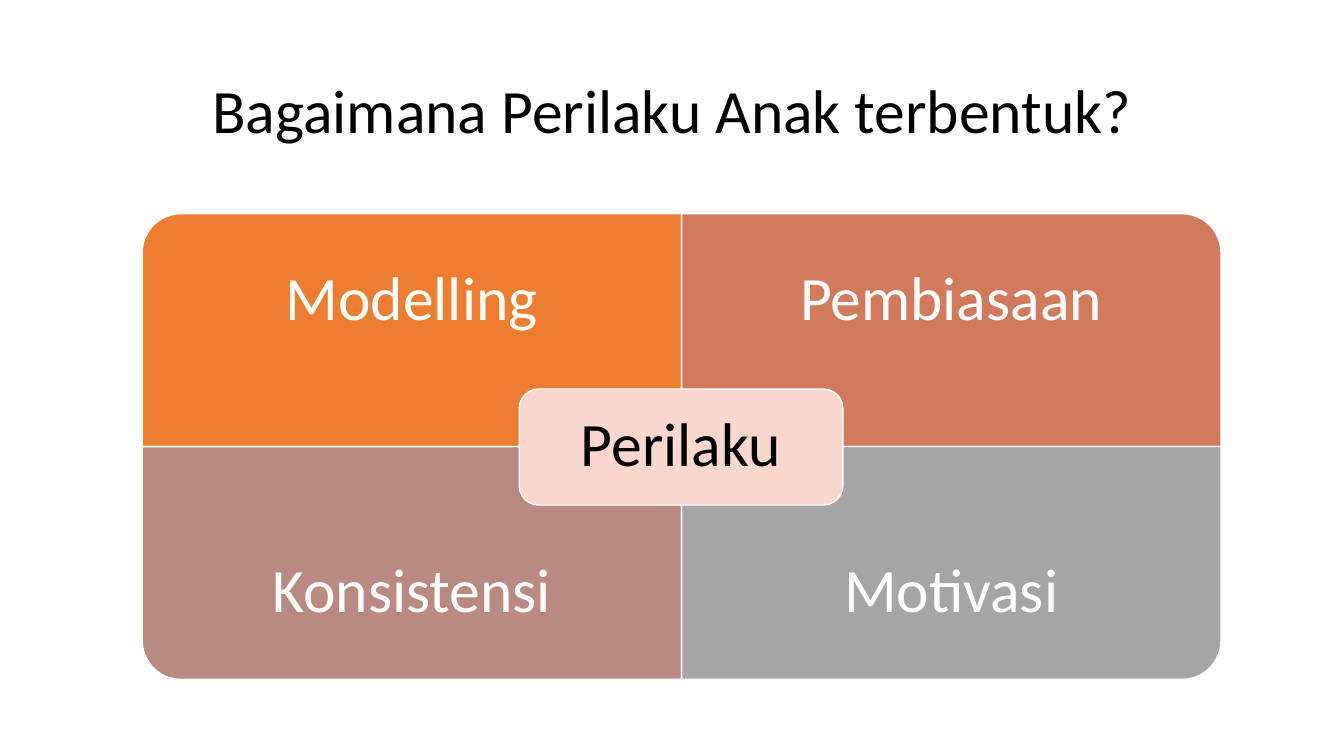
from pptx import Presentation
from pptx.dml.color import RGBColor
from pptx.enum import shapes, text
from pptx.util import Inches, Pt

WHITE = RGBColor(0xFF, 0xFF, 0xFF)
BLACK = RGBColor(0x00, 0x00, 0x00)
ORANGE = RGBColor(0xED, 0x7D, 0x31)
TERRACOTTA = RGBColor(0xD1, 0x7B, 0x5C)
ROSE = RGBColor(0xB9, 0x8A, 0x82)
GRAY = RGBColor(0xA5, 0xA5, 0xA5)
PINK = RGBColor(0xF8, 0xD7, 0xCE)

LEFT, TOP = 1.41, 2.12
WIDTH, HEIGHT = 5.35, 2.31
LABEL_HEIGHT = 1.73


def write_text(shape, wording, color, inset):
    frame = shape.text_frame
    frame.word_wrap = True
    frame.auto_size = text.MSO_AUTO_SIZE.NONE
    frame.vertical_anchor = text.MSO_ANCHOR.MIDDLE
    frame.margin_left = frame.margin_right = Inches(inset)
    frame.margin_top = frame.margin_bottom = Inches(inset)
    paragraph = frame.paragraphs[0]
    paragraph.alignment = text.PP_ALIGN.CENTER
    paragraph.line_spacing = 0.9
    run = paragraph.add_run()
    run.text = wording
    run.font.name = "Calibri"
    run.font.size = Pt(44)
    run.font.color.rgb = color


def add_panel(kind, left, top, width, height, color):
    panel = slide.shapes.add_shape(
        kind, Inches(left), Inches(top), Inches(width), Inches(height))
    panel.shadow.inherit = False
    panel.fill.solid()
    panel.fill.fore_color.rgb = color
    panel.line.color.rgb = WHITE
    panel.line.width = Pt(1)
    return panel


presentation = Presentation()
presentation.slide_width = Inches(13.33)
presentation.slide_height = Inches(7.5)
slide = presentation.slides.add_slide(presentation.slide_layouts[5])

title = slide.shapes.title
title.left, title.top = Inches(0.92), Inches(0.4)
title.width, title.height = Inches(11.5), Inches(1.45)
write_text(title, "Bagaimana Perilaku Anak terbentuk?", BLACK, 0.05)

quadrants = [
    ("Modelling", ORANGE, 0, 0, 270),
    ("Pembiasaan", TERRACOTTA, 0, 1, 0),
    ("Konsistensi", ROSE, 1, 0, 180),
    ("Motivasi", GRAY, 1, 1, 90),
]
for wording, color, row, column, rotation in quadrants:
    left = LEFT + column * WIDTH
    top = TOP + row * HEIGHT
    width, height = (HEIGHT, WIDTH) if rotation % 180 else (WIDTH, HEIGHT)
    panel = add_panel(
        shapes.MSO_SHAPE.ROUND_1_RECTANGLE,
        left + (WIDTH - width) / 2, top + (HEIGHT - height) / 2,
        width, height, color)
    panel.rotation = rotation
    label_top = top + row * (HEIGHT - LABEL_HEIGHT)
    label = slide.shapes.add_textbox(
        Inches(left), Inches(label_top), Inches(WIDTH), Inches(LABEL_HEIGHT))
    write_text(label, wording, WHITE, 0.34)

center = add_panel(
    shapes.MSO_SHAPE.ROUNDED_RECTANGLE, 5.15, 3.86, 3.21, 1.15, PINK)
write_text(center, "Perilaku", BLACK, 0.18)

presentation.save("out.pptx")
